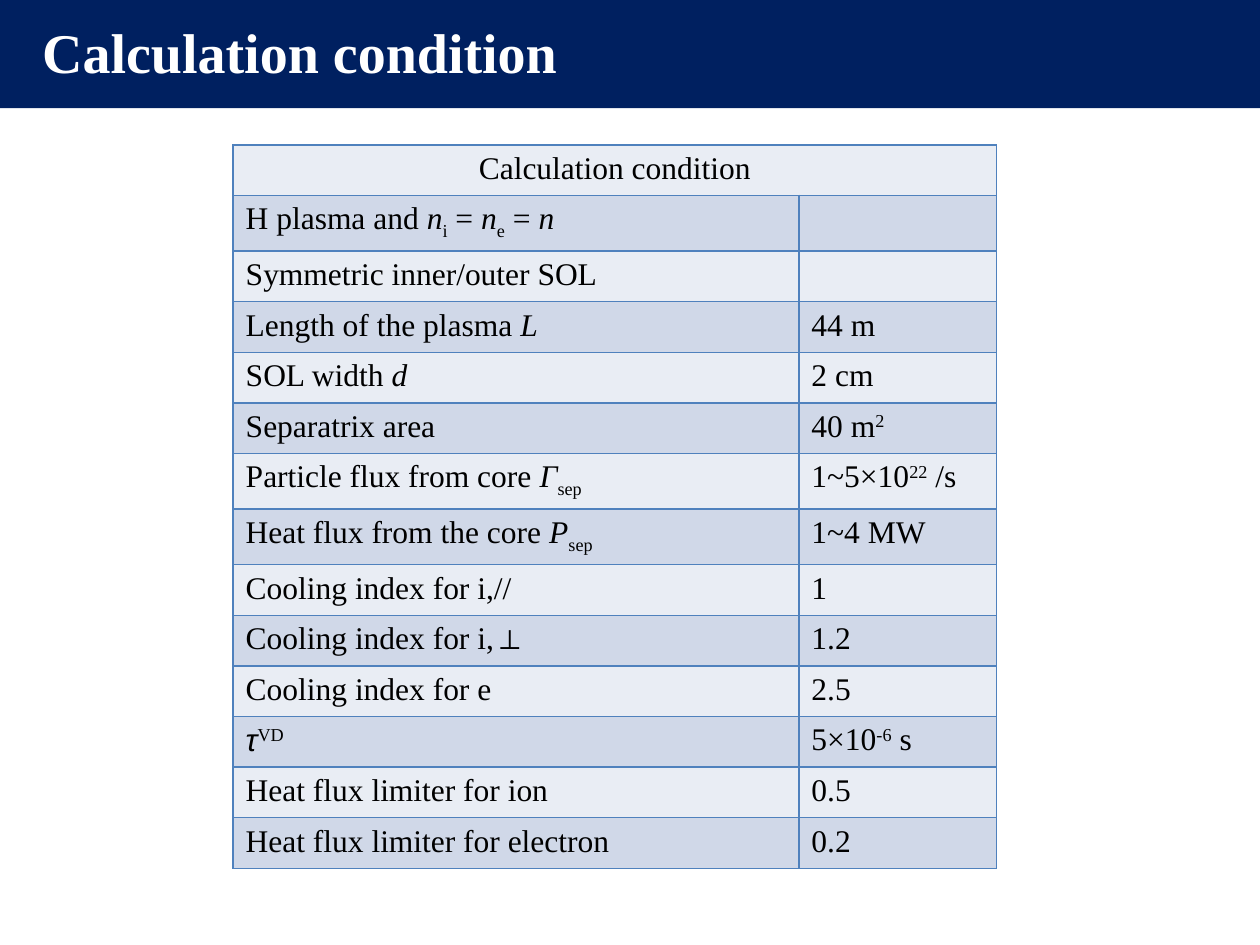
"""Build a slide with the table of calculation conditions."""
from dataclasses import dataclass

from lxml import etree
from pptx import Presentation
from pptx.dml.color import RGBColor
from pptx.enum.shapes import MSO_SHAPE
from pptx.enum.text import MSO_AUTO_SIZE, PP_ALIGN
from pptx.oxml.ns import qn
from pptx.slide import Slide
from pptx.table import _Cell
from pptx.util import Cm, Pt

RECTANGLE = MSO_SHAPE.RECTANGLE
FIT_SHAPE = MSO_AUTO_SIZE.SHAPE_TO_FIT_TEXT
CENTER = PP_ALIGN.CENTER
LEFT = PP_ALIGN.LEFT

COLORS = {
    "banner": "002060",
    "title": "FFFFFF",
    "text": "000000",
    "border": "4F81BD",
    "light": "E9EDF4",
    "dark": "D0D8E8",
}
SERIF = "Times New Roman"
SANS = "Arial"
TITLE = "Calculation condition"
SUBSCRIPT = -25
SUPERSCRIPT = 30
COLUMN_WIDTHS = (4.49 * 2.54, 1.57 * 2.54)
ROW_HEIGHT = 1.02
SUBSCRIPT_ROW_HEIGHT = 1.12


@dataclass(frozen=True)
class Span:
    """A stretch of text in one style."""

    text: str
    italic: bool = False
    baseline: int = 0
    font: str = SERIF


@dataclass(frozen=True)
class Condition:
    """A table row: a label and its value."""

    label: tuple[Span, ...]
    value: tuple[Span, ...] = ()

    @property
    def height(self) -> float:
        """Give the row height in centimetres."""
        lowered = any(span.baseline < 0 for span in self.label)
        return SUBSCRIPT_ROW_HEIGHT if lowered else ROW_HEIGHT


def plain(text: str) -> tuple[Span, ...]:
    """Wrap unstyled text as spans."""
    return (Span(text),)


def symbol(text: str, font: str = SERIF) -> Span:
    """Make an italic symbol."""
    return Span(text, italic=True, font=font)


def sub(text: str) -> Span:
    """Make a subscript."""
    return Span(text, baseline=SUBSCRIPT)


def sup(text: str) -> Span:
    """Make a superscript."""
    return Span(text, baseline=SUPERSCRIPT)


CONDITIONS = (
    Condition(plain(TITLE)),
    Condition((Span("H plasma and "), symbol("n"), sub("i"), Span(" = "),
               symbol("n"), sub("e"), Span(" = "), symbol("n"))),
    Condition(plain("Symmetric inner/outer SOL")),
    Condition((Span("Length of the plasma "), symbol("L")), plain("44 m")),
    Condition((Span("SOL width "), symbol("d")), plain("2 cm")),
    Condition(plain("Separatrix area"), (Span("40 m"), sup("2"))),
    Condition((Span("Particle flux from core "), symbol("Γ"), sub("sep")),
              (Span("1~5×10"), sup("22"), Span(" /s"))),
    Condition((Span("Heat flux from the core "), symbol("P"), sub("sep")),
              plain("1~4 MW")),
    Condition(plain("Cooling index for i,//"), plain("1")),
    Condition(plain("Cooling index for i,⊥"), plain("1.2")),
    Condition(plain("Cooling index for e"), plain("2.5")),
    Condition((symbol("τ", SANS), sup("VD")),
              (Span("5×10"), sup("-6"), Span(" s"))),
    Condition(plain("Heat flux limiter for ion"), plain("0.5")),
    Condition(plain("Heat flux limiter for electron"), plain("0.2")),
)


def color(name: str) -> RGBColor:
    """Look up a named colour."""
    return RGBColor.from_string(COLORS[name])


def add_banner(slide: Slide, width: int) -> None:
    """Draw the title on its full-width banner."""
    banner = slide.shapes.add_shape(RECTANGLE, 0, Cm(-0.02), width, Cm(2.2))
    banner.shadow.inherit = False
    banner.fill.solid()
    banner.fill.fore_color.rgb = color("banner")
    banner.line.fill.background()

    box = slide.shapes.add_textbox(Cm(0.6), Cm(0.22), Cm(11), Cm(1.62))
    box.text_frame.word_wrap = False
    box.text_frame.auto_size = FIT_SHAPE
    run = box.text_frame.paragraphs[0].add_run()
    run.text = TITLE
    run.font.name = SERIF
    run.font.size = Pt(32)
    run.font.bold = True
    run.font.color.rgb = color("title")


def add_borders(cell: _Cell) -> None:
    """Draw a thin line on every side of a cell."""
    properties = cell._tc.get_or_add_tcPr()
    for side in ("a:lnL", "a:lnR", "a:lnT", "a:lnB"):
        line = etree.SubElement(properties, qn(side), w=str(Pt(1)))
        fill = etree.SubElement(line, qn("a:solidFill"))
        etree.SubElement(fill, qn("a:srgbClr"), val=COLORS["border"])


def fill_cell(cell: _Cell, spans: tuple[Span, ...], shade: str,
              align: PP_ALIGN) -> None:
    """Style a cell and write its spans."""
    add_borders(cell)
    cell.fill.solid()
    cell.fill.fore_color.rgb = color(shade)
    para = cell.text_frame.paragraphs[0]
    para.alignment = align
    para.font.size = Pt(18)
    for span in spans:
        run = para.add_run()
        run.text = span.text
        run.font.name = span.font
        run.font.size = Pt(18)
        run.font.italic = span.italic
        run.font.color.rgb = color("text")
        if span.baseline:
            run._r.get_or_add_rPr().set("baseline", str(span.baseline * 1000))


def add_conditions(slide: Slide) -> None:
    """Draw the table of conditions."""
    height = sum(condition.height for condition in CONDITIONS)
    table = slide.shapes.add_table(
        len(CONDITIONS), len(COLUMN_WIDTHS), Cm(4.7), Cm(2.92),
        Cm(sum(COLUMN_WIDTHS)), Cm(height)).table
    table.first_row = False
    table.horz_banding = False
    for column, width in zip(table.columns, COLUMN_WIDTHS):
        column.width = Cm(width)
    for index, condition in enumerate(CONDITIONS):
        table.rows[index].height = Cm(condition.height)
        shade = "dark" if index % 2 else "light"
        align = LEFT if index else CENTER
        for column, spans in enumerate((condition.label, condition.value)):
            fill_cell(table.cell(index, column), spans, shade, align)
    table.cell(0, 0).merge(table.cell(0, 1))


def main() -> None:
    """Build and save the deck."""
    deck = Presentation()
    deck.slide_width = Cm(25.4)
    deck.slide_height = Cm(19.05)
    slide = deck.slides.add_slide(deck.slide_layouts[6])
    add_banner(slide, deck.slide_width)
    add_conditions(slide)
    deck.save("out.pptx")


if __name__ == "__main__":
    main()
